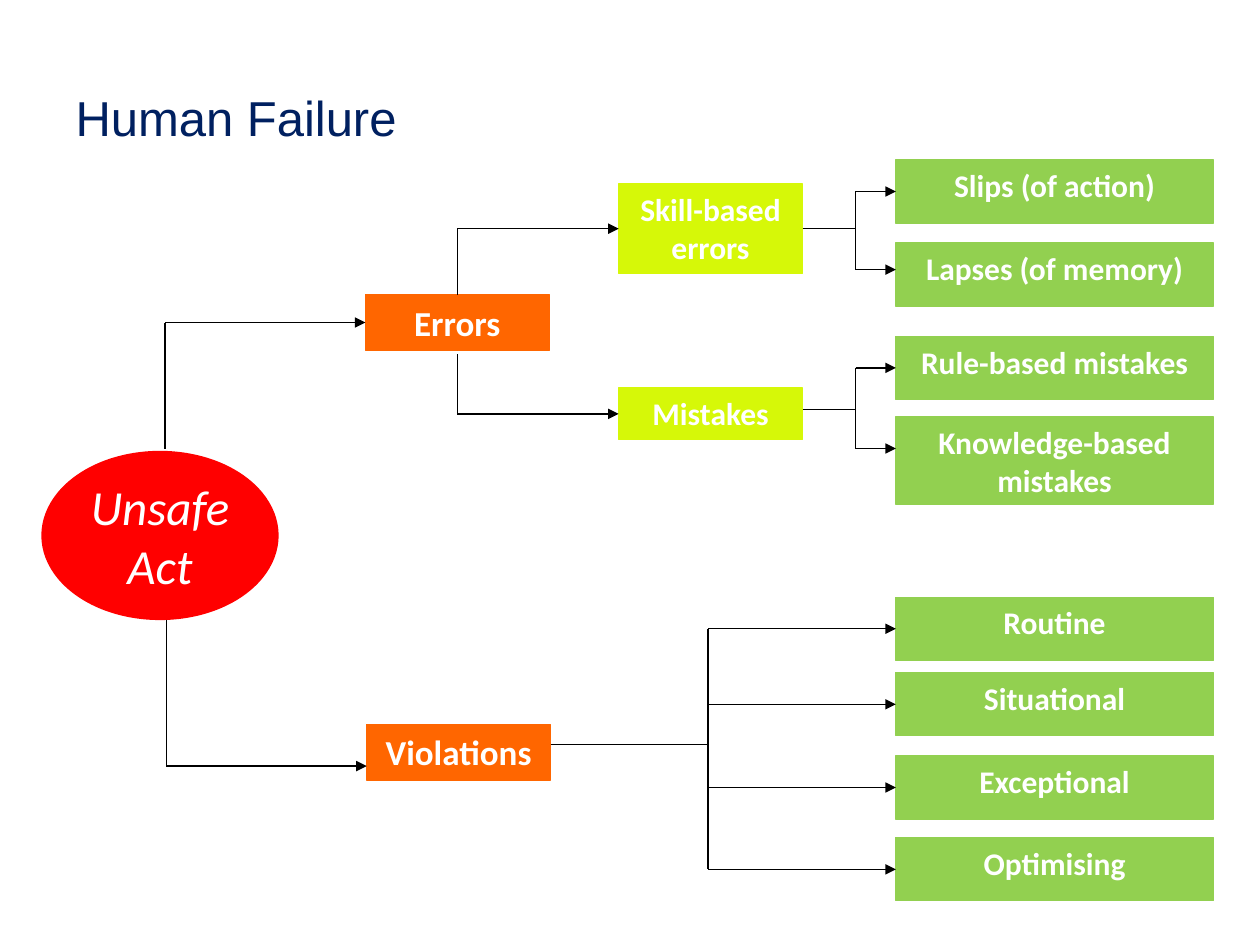
from pptx import Presentation
from pptx.dml.color import RGBColor as RGB
from pptx.enum.shapes import MSO_CONNECTOR as LINK, MSO_SHAPE as SHAPE
from pptx.enum.text import MSO_ANCHOR as ANCHOR, MSO_AUTO_SIZE as AUTO, PP_ALIGN as ALIGN
from pptx.oxml.ns import qn
from pptx.util import Inches, Pt
from lxml.etree import SubElement

WHITE = RGB(0xFF, 0xFF, 0xFF)
BLACK = RGB(0, 0, 0)
NAVY = RGB(0x00, 0x20, 0x60)
RED = RGB(0xFF, 0, 0)
ORANGE = RGB(0xFF, 0x66, 0x00)
LIME = RGB(0xD6, 0xF8, 0x08)
GREEN = RGB(0x92, 0xD0, 0x50)
LEFT, RIGHT = 1, 3
NEAR = Inches(0.03)


def add_title(slide, text, box):
    """Place and format the title."""
    title = slide.shapes.title
    title.left, title.top, title.width, title.height = map(Inches, box)
    frame = title.text_frame
    frame.text = text
    frame.vertical_anchor = ANCHOR.MIDDLE
    para = frame.paragraphs[0]
    para.alignment = ALIGN.LEFT
    font = para.runs[0].font
    font.name, font.size = "Arial", Pt(28)
    font.color.rgb = NAVY


def add_node(slide, text, box, color, size=18, kind=SHAPE.RECTANGLE, edge=0.75):
    """Add a filled shape with centred white text."""
    node = slide.shapes.add_shape(kind, *map(Inches, box))
    node.shadow.inherit = False
    node.fill.solid()
    node.fill.fore_color.rgb = color
    node.line.color.rgb = color
    node.line.width = Pt(edge)
    frame = node.text_frame
    frame.text = text
    frame.word_wrap = True
    frame.vertical_anchor = ANCHOR.TOP
    para = frame.paragraphs[0]
    para.alignment = ALIGN.CENTER
    font = para.runs[0].font
    font.name, font.size, font.bold = "Calibri", Pt(size), True
    font.color.rgb = WHITE
    return node


def add_act(slide, text, box):
    """Add the root ellipse."""
    node = add_node(slide, text, box, RED, 28, SHAPE.OVAL, 6)
    frame = node.text_frame
    frame.vertical_anchor = ANCHOR.MIDDLE
    frame.margin_left = frame.margin_right = Inches(0.01)
    frame.margin_top = frame.margin_bottom = Inches(0.01)
    font = frame.paragraphs[0].runs[0].font
    font.bold, font.italic = False, True


def add_stage(slide, text, box, color, size):
    """Add a middle box that fits its text."""
    node = add_node(slide, text, box, color, size)
    node.text_frame.auto_size = AUTO.SHAPE_TO_FIT_TEXT
    return node


def add_line(slide, x1, y1, x2, y2, arrow=False):
    """Add a thin black line, with an arrowhead if asked."""
    line = slide.shapes.add_connector(LINK.STRAIGHT, x1, y1, x2, y2)
    line.line.color.rgb = BLACK
    line.line.width = Pt(0.75)
    if arrow:
        SubElement(line.line._get_or_add_ln(), qn("a:tailEnd"), type="triangle")
    SubElement(line._element.spPr, qn("a:effectLst"))
    return line


def snap(node, y):
    """Return the height to meet a node at, and whether it is its middle."""
    mid = node.top + node.height // 2
    joined = abs(mid - y) <= NEAR
    return (mid if joined else y), joined


def add_arrow(slide, x, y, node):
    """Point an arrow at the left side of a node and return its height."""
    y, joined = snap(node, y)
    line = add_line(slide, x, y, node.left, y, True)
    if joined:
        line.end_connect(node, LEFT)
    return y


def add_elbow(slide, x, start, y, node, source=None):
    """Run a line up or down from start, then an arrow to a node."""
    x = Inches(x)
    y = add_arrow(slide, x, Inches(y), node)
    line = add_line(slide, x, Inches(start), x, y)
    if source:
        line.begin_connect(source, 0)


def add_fork(slide, node, y, x, leaves):
    """Split one stem from a node into arrows to its leaf boxes."""
    x = Inches(x)
    y, joined = snap(node, Inches(y))
    stem = add_line(slide, node.left + node.width, y, x, y)
    if joined:
        stem.begin_connect(node, RIGHT)
    ends = []
    for text, top, height, aim in leaves:
        leaf = add_node(slide, text, (7.11, top, 2.52, height), GREEN)
        ends.append(add_arrow(slide, x, Inches(aim), leaf))
    add_line(slide, x, ends[0], x, ends[-1])


def add_errors(slide):
    """Build the upper branch."""
    errors = add_stage(slide, "Errors", (2.9, 2.34, 1.46, 0.44), ORANGE, 20)
    skill = add_stage(slide, "Skill-based errors", (4.91, 1.46, 1.46, 0.71), LIME, 18)
    slip = add_stage(slide, "Mistakes", (4.91, 3.08, 1.46, 0.41), LIME, 18)
    add_elbow(slide, 1.31, 3.56, 2.56, errors)
    add_elbow(slide, 3.63, 2.34, 1.84, skill, errors)
    add_elbow(slide, 3.63, 2.81, 3.31, slip)
    add_fork(slide, skill, 1.84, 6.79, [
        ("Slips (of action)", 1.27, 0.5, 1.54),
        ("Lapses (of memory)", 1.93, 0.5, 2.14)])
    add_fork(slide, slip, 3.25, 6.79, [
        ("Rule-based mistakes", 2.67, 0.5, 2.95),
        ("Knowledge-based mistakes", 3.31, 0.69, 3.56)])


def add_breaches(slide):
    """Build the lower branch."""
    node = add_stage(slide, "Violations", (2.91, 5.75, 1.46, 0.44), ORANGE, 20)
    add_elbow(slide, 1.32, 4.92, 6.08, node)
    add_fork(slide, node, 5.91, 5.62, [
        ("Routine", 4.74, 0.5, 5),
        ("Situational", 5.34, 0.5, 5.58),
        ("Exceptional", 6, 0.5, 6.23),
        ("Optimising", 6.65, 0.5, 6.88)])


def main():
    """Build and save the slide."""
    deck = Presentation()
    deck.slide_width, deck.slide_height = Inches(10), Inches(7.5)
    slide = deck.slides.add_slide(deck.slide_layouts[5])
    add_title(slide, "Human Failure", (0.5, 0.3, 9, 1.25))
    add_act(slide, "Unsafe Act", (0.37, 3.62, 1.8, 1.26))
    add_errors(slide)
    add_breaches(slide)
    deck.save("out.pptx")


if __name__ == "__main__":
    main()
